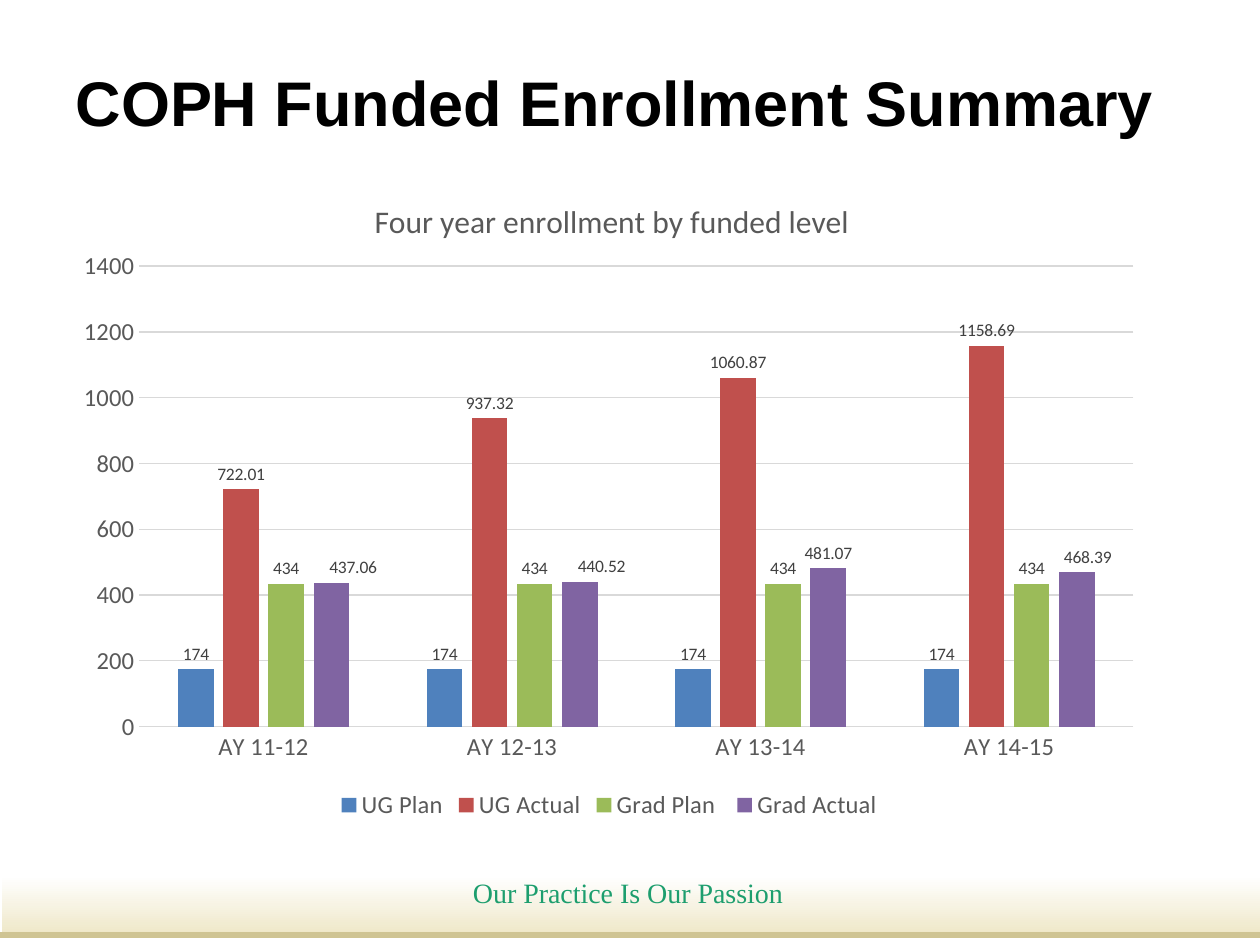
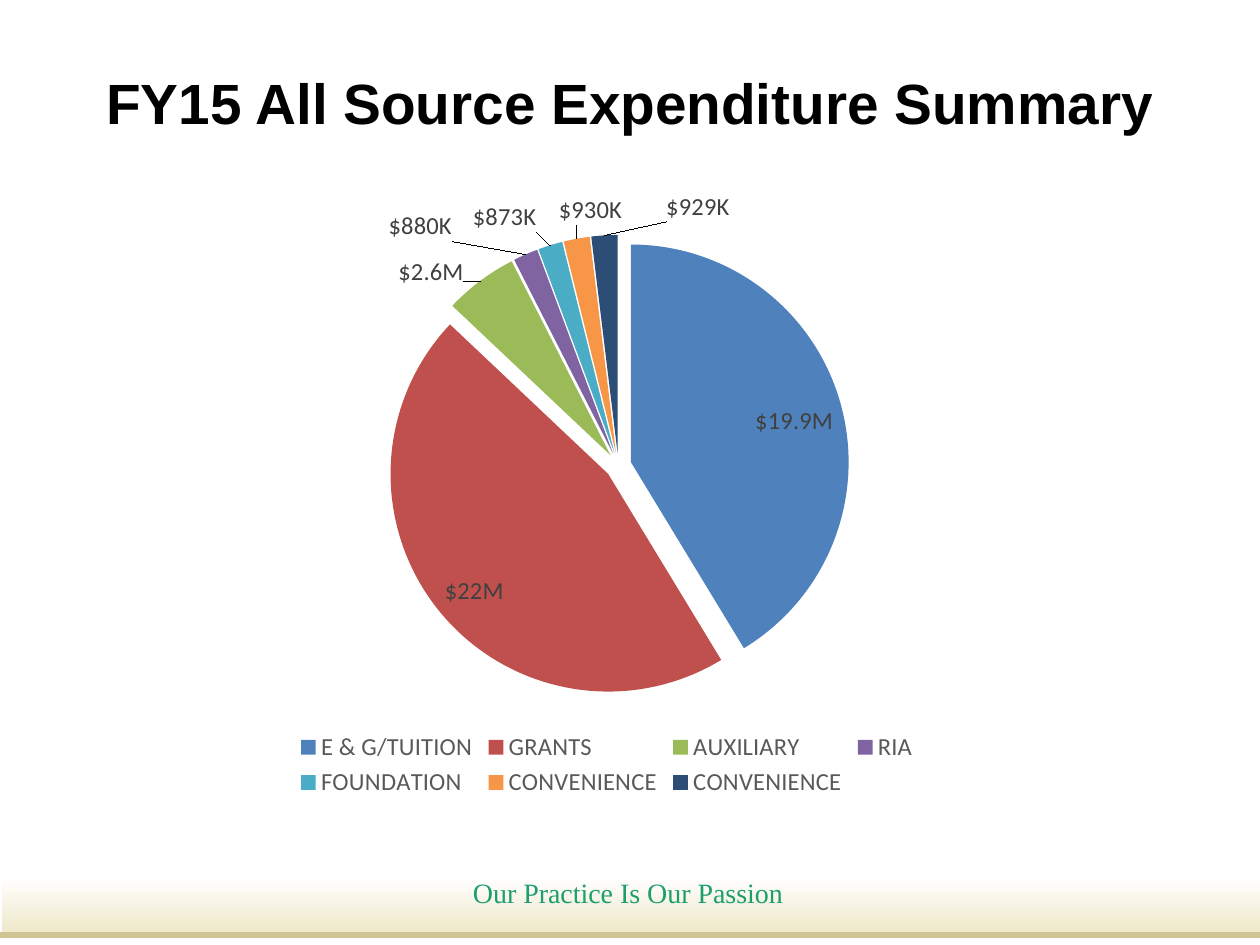
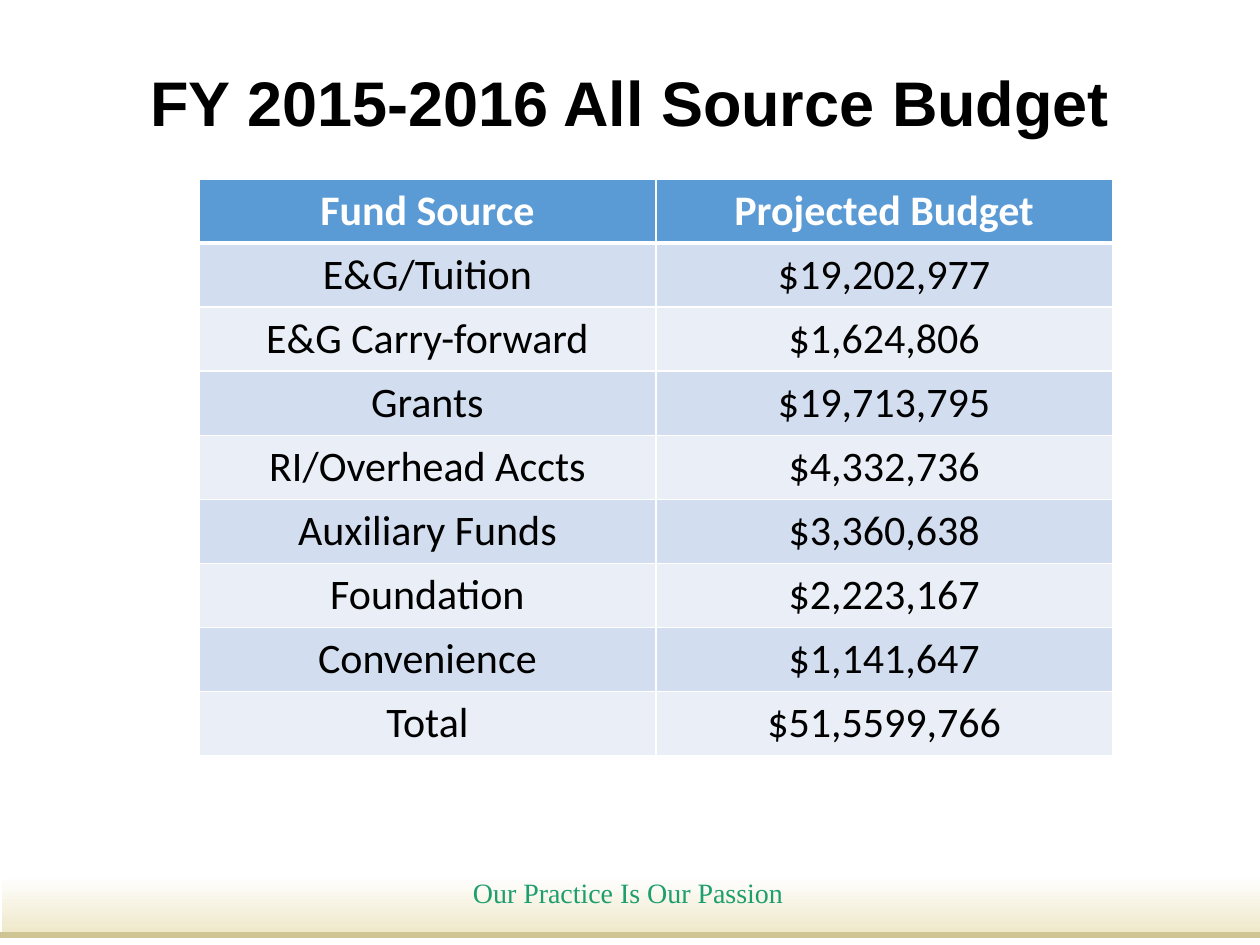
"""Build the enrollment, expenditure and budget slides."""
from lxml import etree
from pptx import Presentation
from pptx.chart.data import CategoryChartData
from pptx.dml.color import RGBColor
from pptx.enum import chart as ch, shapes, text
from pptx.oxml.ns import qn
from pptx.util import Inches, Pt

BLACK = RGBColor(0x00, 0x00, 0x00)
WHITE = RGBColor(0xFF, 0xFF, 0xFF)
CREAM = RGBColor(0xEF, 0xE8, 0xC9)
KHAKI = RGBColor(0xCF, 0xC4, 0x93)
GREEN = RGBColor(0x1D, 0x9E, 0x6E)
GRAY = RGBColor(0x59, 0x59, 0x59)
LABEL = RGBColor(0x40, 0x40, 0x40)
GRID = RGBColor(0xD9, 0xD9, 0xD9)
HEADER = RGBColor(0x5B, 0x9B, 0xD5)
BANDS = (RGBColor(0xD2, 0xDE, 0xEF), RGBColor(0xEA, 0xEF, 0xF7))
PALETTE = [RGBColor.from_string(c) for c in (
    "4F81BD", "C0504D", "9BBB59", "8064A2", "4BACC6", "F79646", "2C4D75")]

MOTTO = "Our Practice Is Our Passion"
CHART_TITLE = "Four year enrollment by funded level"
YEARS = ["AY 11-12", "AY 12-13", "AY 13-14", "AY 14-15"]
ENROLLMENT = [
    ("UG Plan", (174, 174, 174, 174)),
    ("UG Actual", (722.01, 937.32, 1060.87, 1158.69)),
    ("Grad Plan ", (434, 434, 434, 434)),
    ("Grad Actual", (437.06, 440.52, 481.07, 468.39)),
]
GRAD_LABEL_SHIFTS = {0: 0.02, 1: 0.02, 3: 0.01}
EXPENDITURE = [
    ("E & G/TUITION", 19884590, "$19.9M", None),
    ("GRANTS", 22012429, "$22M", None),
    ("AUXILIARY", 2621634, "$2.6M", (-0.01, 0.02)),
    ("RIA", 880121, "$880K", (-0.06, -0.01)),
    ("FOUNDATION", 872597, "$873K", (-0.01, -0.01)),
    ("CONVENIENCE", 929984, "$930K", (0.04, -0.01)),
    ("CONVENIENCE", 929984, "$929K", (0.08, -0.01)),
]
BUDGET = [
    ("Fund Source", "Projected Budget"),
    ("E&G/Tuition", "$19,202,977"),
    ("E&G Carry-forward", "$1,624,806"),
    ("Grants", "$19,713,795"),
    ("RI/Overhead Accts", "$4,332,736"),
    ("Auxiliary Funds", "$3,360,638"),
    ("Foundation", "$2,223,167"),
    ("Convenience", "$1,141,647"),
    ("Total", "$51,5599,766"),
]


def box(*lengths):
    return [Inches(n) for n in lengths]


def style(font, size, color, name="Calibri", bold=False):
    font.size, font.name, font.bold = Pt(size), name, bold
    font.color.rgb = color


def add_run(p, words, *look, align=text.PP_ALIGN.CENTER, **extra):
    p.alignment = align
    r = p.add_run()
    r.text = words
    style(r.font, *look, **extra)


def add_slide(prs, title, size=36, align=text.PP_ALIGN.CENTER):
    s = prs.slides.add_slide(prs.slide_layouts[5])
    band = s.shapes.add_shape(shapes.MSO_SHAPE.RECTANGLE, *box(4.66, 2.02, 0.74, 10.03))
    band.rotation = 90
    band.shadow.inherit = False
    band.line.fill.background()
    band.fill.gradient()
    band.fill.gradient_angle = 0
    for stop, position, color in zip(band.fill.gradient_stops, (0.39, 1), (WHITE, CREAM)):
        stop.position = position
        stop.color.rgb = color

    rule = s.shapes.add_connector(shapes.MSO_CONNECTOR.STRAIGHT, *box(0, 7.42, 10.03, 7.42))
    rule.line.color.rgb = KHAKI
    rule.line.width = Pt(3)
    etree.SubElement(rule._element.spPr, qn("a:effectLst"))

    tf = s.shapes.add_textbox(*box(2.56, 6.9, 4.85, 0.37)).text_frame
    tf.word_wrap = True
    add_run(tf.paragraphs[0], MOTTO, 16, GREEN, "Times New Roman")

    sp = s.shapes.title
    sp.left, sp.top, sp.width, sp.height = box(0.5, 0.33, 9, 0.95)
    sp.text_frame.vertical_anchor = text.MSO_ANCHOR.MIDDLE
    add_run(sp.text_frame.paragraphs[0], title, size, BLACK, "Arial", bold=True, align=align)
    return s


def place(element, index=0, edge=True, **fractions):
    layout = element.find(qn("c:layout"))
    if layout is None:
        layout = etree.Element(qn("c:layout"))
        element.insert(index, layout)
    manual = etree.SubElement(layout, qn("c:manualLayout"))
    values = dict(fractions)
    if edge:
        values = {"xMode": "edge", "yMode": "edge", **values}
    if "w" in fractions:
        values = {"layoutTarget": "inner", **values}
    for tag, value in values.items():
        etree.SubElement(manual, qn("c:" + tag)).set("val", str(value))


def shift_label(label, x, y=0):
    place(label._get_or_add_dLbl(), 1, edge=False, x=x, y=y)


def add_chart(s, kind, bounds, data, plot_area):
    chart = s.shapes.add_chart(kind, *box(*bounds), data).chart
    style(chart.font, 10, BLACK)
    chart.has_title = False
    chart.has_legend = True
    chart.legend.position = ch.XL_LEGEND_POSITION.BOTTOM
    chart.legend.include_in_layout = False
    style(chart.legend.font, 14, GRAY)
    place(chart._chartSpace.chart.plotArea, **plot_area)
    return chart


def enrollment_chart(s):
    data = CategoryChartData()
    data.categories = YEARS
    for name, values in ENROLLMENT:
        data.add_series(name, values)
    chart = add_chart(s, ch.XL_CHART_TYPE.COLUMN_CLUSTERED, (0.5, 1.33, 8.67, 5.22), data,
                      dict(x=0.07, y=0.15, w=0.91, h=0.7))
    add_run(chart.chart_title.text_frame.paragraphs[0], CHART_TITLE, 18, GRAY)
    place(chart.chart_title._element, x=0.28, y=0.04)

    for axis in (chart.category_axis, chart.value_axis):
        axis.major_tick_mark = axis.minor_tick_mark = ch.XL_TICK_MARK.NONE
        style(axis.tick_labels.font, 14, GRAY)
    lines = (chart.category_axis.format.line, chart.value_axis.major_gridlines.format.line)
    for line in lines:
        line.color.rgb = GRID
        line.width = Pt(0.75)
    chart.value_axis.format.line.fill.background()
    chart.value_axis.minimum_scale = 0
    chart.value_axis.maximum_scale = 1400
    chart.value_axis.major_unit = 200

    plot = chart.plots[0]
    plot.gap_width, plot.overlap, plot.vary_by_categories = 219, -27, False
    for series, color in zip(plot.series, PALETTE):
        series.format.fill.solid()
        series.format.fill.fore_color.rgb = color
        labels = series.data_labels
        labels.show_value = True
        labels.position = ch.XL_LABEL_POSITION.OUTSIDE_END
        style(labels.font, 10, LABEL)
    for i, x in GRAD_LABEL_SHIFTS.items():
        label = plot.series[-1].points[i].data_label
        style(label.font, 10, LABEL)
        label.position = ch.XL_LABEL_POSITION.OUTSIDE_END
        shift_label(label, x)


def expenditure_chart(s):
    data = CategoryChartData(number_format='"$"#,##0_);[Red]\\("$"#,##0\\)')
    data.categories = [row[0] for row in EXPENDITURE]
    data.add_series("Series 1", [row[1] for row in EXPENDITURE])
    chart = add_chart(s, ch.XL_CHART_TYPE.PIE, (0.15, 1.42, 9.33, 4.95), data,
                      dict(x=0.31, y=0.09, w=0.4, h=0.74))
    series = chart.plots[0].series[0]
    explosion = etree.Element(qn("c:explosion"), val="6")
    series._element.find(qn("c:tx")).addnext(explosion)
    series.data_labels.show_value = True
    style(series.data_labels.font, 14, LABEL)
    for i, (_, _, amount, shift) in enumerate(EXPENDITURE):
        point = series.points[i]
        point.format.fill.solid()
        point.format.fill.fore_color.rgb = PALETTE[i]
        label = point.data_label
        add_run(label.text_frame.paragraphs[0], amount, 14, LABEL)
        if shift:
            label.position = ch.XL_LABEL_POSITION.OUTSIDE_END
            shift_label(label, *shift)
        else:
            label.position = ch.XL_LABEL_POSITION.INSIDE_END


def set_borders(cell, **widths):
    tc_pr = cell._tc.get_or_add_tcPr()
    for i, (side, width) in enumerate(widths.items()):
        ln = etree.Element(qn("a:ln" + side), w=str(Pt(width)))
        fill = etree.SubElement(ln, qn("a:solidFill"))
        etree.SubElement(fill, qn("a:srgbClr"), val=str(WHITE))
        tc_pr.insert(i, ln)


def budget_table(s):
    bounds = box(1.58, 1.42, 7.25, 4.58)
    table = s.shapes.add_table(len(BUDGET), 2, *bounds).table
    for i, row in enumerate(BUDGET):
        for j, words in enumerate(row):
            cell = table.cell(i, j)
            cell.fill.solid()
            cell.fill.fore_color.rgb = BANDS[(i - 1) % 2] if i else HEADER
            set_borders(cell, L=1, R=1, T=3 if i == 1 else 1, B=1 if i else 3)
            add_run(cell.text_frame.paragraphs[0], words, 24,
                    BLACK if i else WHITE, bold=i == 0)


def main():
    prs = Presentation()
    prs.slide_width, prs.slide_height = box(10, 7.5)
    enrollment_chart(add_slide(prs, "COPH Funded Enrollment Summary",
                               align=text.PP_ALIGN.LEFT))
    expenditure_chart(add_slide(prs, "FY15 All Source Expenditure Summary", 32.4))
    budget_table(add_slide(prs, "FY 2015-2016 All Source Budget"))
    prs.save("out.pptx")


if __name__ == "__main__":
    main()
